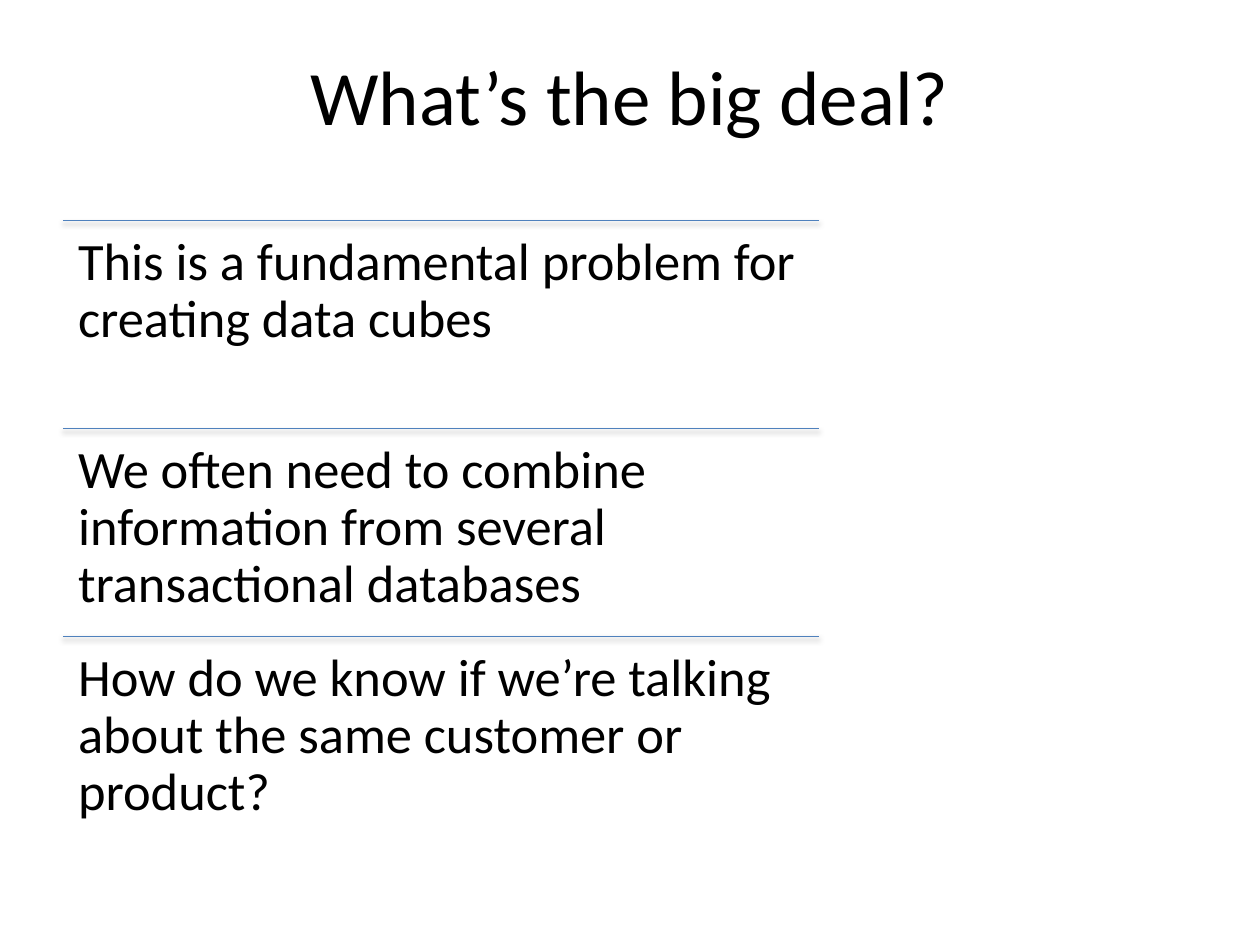
from dataclasses import dataclass

from lxml import etree
from pptx import Presentation
from pptx.dml.color import RGBColor
from pptx.enum.shapes import MSO_CONNECTOR
from pptx.enum.text import MSO_ANCHOR, PP_ALIGN
from pptx.oxml import parse_xml
from pptx.oxml.ns import nsdecls, qn
from pptx.util import Inches, Pt

STRAIGHT = MSO_CONNECTOR.STRAIGHT
TOP, MIDDLE = MSO_ANCHOR.TOP, MSO_ANCHOR.MIDDLE
LEFT, CENTER = PP_ALIGN.LEFT, PP_ALIGN.CENTER
TITLE_ONLY = 5


# Colours and type sizes
@dataclass(frozen=True)
class Theme:
    font: str = "Calibri"
    ink: RGBColor = RGBColor(0, 0, 0)
    rule: RGBColor = RGBColor(0x4F, 0x81, 0xBD)
    title: Pt = Pt(44)
    body: Pt = Pt(30)
    line: Pt = Pt(0.75)


THEME = Theme()
POINTS = [
    "This is a fundamental problem for creating data cubes",
    "We often need to combine information from several transactional databases",
    "How do we know if we’re talking about the same customer or product?",
]
# Row grid, in inches
X, Y, WIDTH, ROW = 0.5, 1.75, 6, 1.65


def apply(target, values):
    for name, value in values.items():
        setattr(target, name, value)


def write(frame, text, size, align):
    para = frame.paragraphs[0]
    para.alignment = align
    run = para.add_run()
    run.text = text
    apply(run.font, {"name": THEME.font, "size": size})
    run.font.color.rgb = THEME.ink
    return para


def add_title(slide, text):
    title = slide.shapes.title
    apply(title, {"left": Inches(0.5), "top": Inches(0.25),
                  "width": Inches(9), "height": Inches(1)})
    title.text_frame.vertical_anchor = MIDDLE
    write(title.text_frame, text, THEME.title, CENTER)


def add_rule(slide, top):
    rule = slide.shapes.add_connector(
        STRAIGHT, Inches(X), Inches(top), Inches(X + WIDTH), Inches(top))
    rule.line.color.rgb = THEME.rule
    rule.line.width = THEME.line
    # Soft shadow straight below the rule
    effects = etree.SubElement(rule.element.find(qn("p:spPr")), qn("a:effectLst"))
    effects.append(parse_xml(
        f'<a:outerShdw {nsdecls("a")} blurRad="{Pt(3.1)}" dist="{Pt(1.6)}" '
        'dir="5400000" rotWithShape="0"><a:srgbClr val="000000">'
        '<a:alpha val="38000"/></a:srgbClr></a:outerShdw>'))


def add_point(slide, text, top):
    box = slide.shapes.add_textbox(
        Inches(X), Inches(top), Inches(WIDTH), Inches(ROW))
    frame = box.text_frame
    sides = ("left", "top", "right", "bottom")
    apply(frame, {f"margin_{side}": Inches(0.12) for side in sides})
    apply(frame, {"word_wrap": True, "vertical_anchor": TOP})
    para = write(frame, text, THEME.body, LEFT)
    apply(para, {"line_spacing": 0.9, "space_after": Pt(10.5)})


def main():
    deck = Presentation()
    apply(deck, {"slide_width": Inches(10), "slide_height": Inches(7.5)})
    slide = deck.slides.add_slide(deck.slide_layouts[TITLE_ONLY])
    add_title(slide, "What’s the big deal?")
    # One ruled row for each point
    for index, text in enumerate(POINTS):
        top = Y + index * ROW
        add_rule(slide, top)
        add_point(slide, text, top)
    deck.save("out.pptx")


main()
